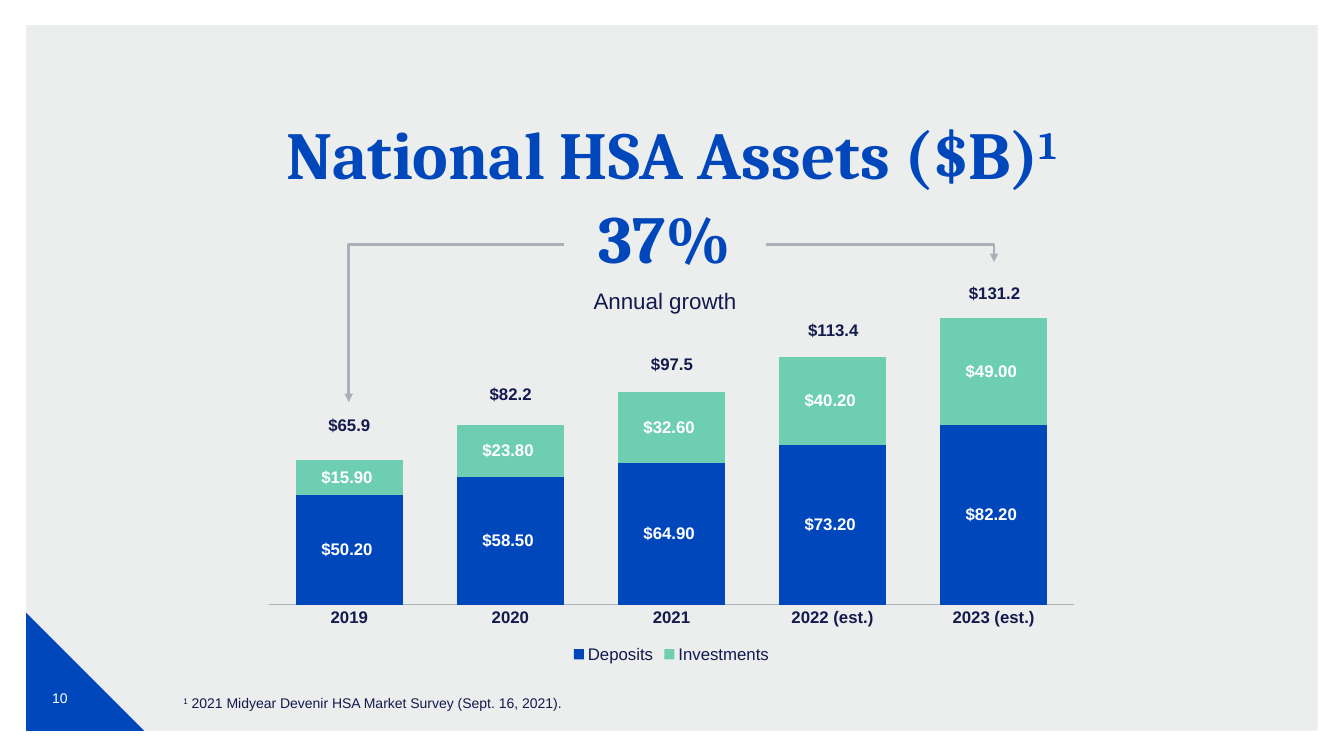
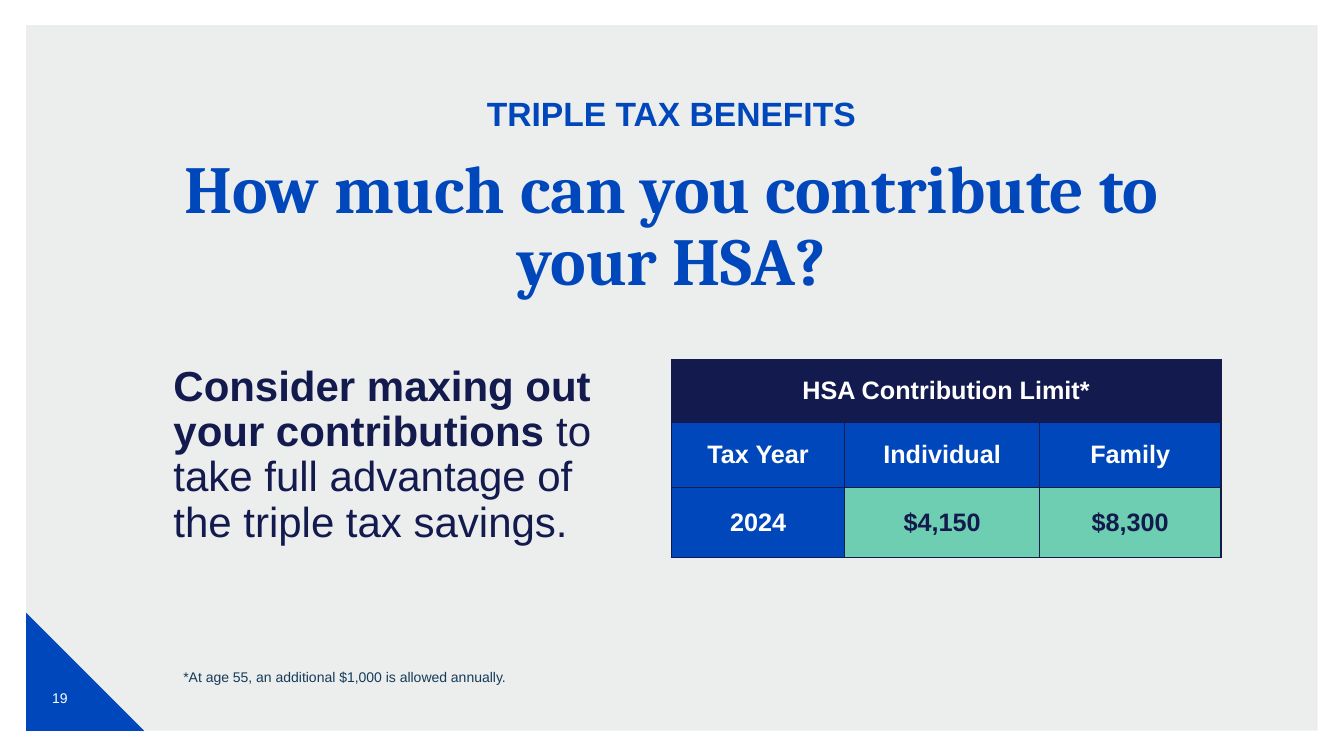
import pptx
import pptx.chart.data
import pptx.dml.color
import pptx.enum.chart
import pptx.enum.shapes
import pptx.enum.text
import pptx.oxml
import pptx.oxml.ns
import pptx.util
from lxml import etree

# Scale: 100 px to the inch
PX = 9144

# Shared style
RGB = pptx.dml.color.RGBColor
BLUE = RGB(0x00, 0x47, 0xBB)
NAVY = RGB(0x13, 0x1A, 0x4D)
MINT = RGB(0x6E, 0xCE, 0xB1)
WHITE = RGB(0xFF, 0xFF, 0xFF)
PANEL = RGB(0xD0, 0xD3, 0xD4)
LINE = RGB(0xAB, 0xAF, 0xB8)
SLATE = RGB(0x15, 0x3B, 0x59)
SANS, SERIF = "Arial", "Cambria"
ALIGN = pptx.enum.text.PP_ALIGN
MIDDLE = pptx.enum.text.MSO_ANCHOR.MIDDLE
TITLE = dict(size=48, face=SERIF, color=BLUE, bold=True, align=ALIGN.CENTER)
HEADING = dict(TITLE, spacing=0.9, inset=0)

# Content: growth slide
GROWTH_TITLE = ["National HSA Assets ($B)", ("1", dict(raised=True))]
GROWTH_NOTE = [("1", dict(raised=True)),
               " 2021 Midyear Devenir HSA Market Survey (Sept. 16, 2021)."]
YEARS = ["2019", "2020", "2021", "2022 (est.)", "2023 (est.)"]
ASSETS = [
    ("Deposits", BLUE, [50.2, 58.5, 64.9, 73.2, 82.2]),
    ("Investments", MINT, [15.9, 23.8, 32.6, 40.2, 49]),
]
# Total label and its top
TOTALS = [("$65.9", 407), ("$82.2", 376), ("$97.5", 346), ("$113.4", 312), ("$131.2", 276)]
DOLLARS = '"$"#,##0.00_);[Red]\\("$"#,##0.00\\)'
# Start and end of the arrows beside the growth figure
GROWTH_ARROWS = [(559, 243, 346, 399), (760, 243, 986, 260)]

# Content: contribution slide
ADVICE = [("Consider maxing out your contributions ", dict(bold=True)),
          "to take full advantage of the triple tax savings."]
LIMITS = [
    ["HSA Contribution Limit*", "", ""],
    ["Tax Year", "Individual", "Family"],
    ["2024", "$4,150", "$8,300"],
]
LIMIT_COLUMNS = [172, 193, 180]
LIMIT_ROWS = [62, 65, 69]


def px(*lengths):
    return [pptx.util.Emu(length * PX) for length in lengths]


def style_font(font, size, color, bold=False, face=SANS):
    font.size, font.bold, font.name = pptx.util.Pt(size), bold, face
    font.color.rgb = color


def write_text(frame, runs, size=12, color=NAVY, bold=False, face=SANS,
               align=ALIGN.LEFT, spacing=None):
    """Fill the first paragraph; a run is a string or (string, overrides)."""
    para = frame.paragraphs[0]
    para.alignment = align
    if spacing:
        para.line_spacing = spacing
    for run in [runs] if isinstance(runs, str) else runs:
        words, changes = (run, {}) if isinstance(run, str) else run
        span = para.add_run()
        span.text = words
        style_font(span.font, size, color, changes.get("bold", bold), face)
        if changes.get("raised"):
            span._r.get_or_add_rPr().set("baseline", "30000")


def add_text(page, place, runs, inset=10, anchor=None, **style):
    frame = page.shapes.add_textbox(*px(*place)).text_frame
    frame.word_wrap = True
    frame.margin_left, frame.margin_right = px(inset, inset)
    if anchor is not None:
        frame.vertical_anchor = anchor
    write_text(frame, runs, **style)


def add_block(page, kind, place, color, opacity=None):
    block = page.shapes.add_shape(kind, *px(*place))
    block.shadow.inherit = False
    block.fill.solid()
    block.fill.fore_color.rgb = color
    block.line.fill.background()
    if opacity:
        tint = block._element.spPr.find(".//" + pptx.oxml.ns.qn("a:srgbClr"))
        etree.SubElement(tint, pptx.oxml.ns.qn("a:alpha"), val=str(opacity * 1000))


def add_page(deck, number):
    """Blank page with the panel, corner and page number."""
    page = deck.slides.add_slide(deck.slide_layouts[6])
    kinds = pptx.enum.shapes.MSO_SHAPE
    add_block(page, kinds.RECTANGLE, (26, 25, 1281, 700), PANEL, opacity=40)
    add_block(page, kinds.RIGHT_TRIANGLE, (26, 608, 117, 117), BLUE)
    add_text(page, (32, 663, 55, 58), number, anchor=MIDDLE,
             size=10, color=WHITE, align=ALIGN.CENTER)
    return page


def add_footnote(page, top, runs, color=NAVY):
    add_text(page, (172, top, 1083, 27), runs, size=10, color=color)


def add_bent_arrow(page, ends):
    arrow = page.shapes.add_connector(pptx.enum.shapes.MSO_CONNECTOR.ELBOW, *px(*ends))
    arrow.line.color.rgb = LINE
    arrow.line.width = pptx.util.Pt(2)
    shape = arrow._element.spPr
    # One corner only
    shape.find(pptx.oxml.ns.qn("a:prstGeom")).set("prst", "bentConnector2")
    stroke = shape.find(pptx.oxml.ns.qn("a:ln"))
    etree.SubElement(stroke, pptx.oxml.ns.qn("a:tailEnd"), type="triangle")
    etree.SubElement(shape, pptx.oxml.ns.qn("a:effectLst"))


def add_assets_chart(page, place):
    kinds = pptx.enum.chart
    data = pptx.chart.data.CategoryChartData(number_format=DOLLARS)
    data.categories = YEARS
    for name, _, values in ASSETS:
        data.add_series(name, values)
    chart = page.shapes.add_chart(kinds.XL_CHART_TYPE.COLUMN_STACKED, *px(*place), data).chart
    chart.has_title = False
    style_font(chart.font, 10, NAVY)

    # Columns and their labels
    plot = chart.plots[0]
    plot.gap_width, plot.overlap = 50, 100
    plot.vary_by_categories = False
    for series, (_, color, _) in zip(plot.series, ASSETS):
        series.format.fill.solid()
        series.format.fill.fore_color.rgb = color
        labels = series.data_labels
        labels.show_value = True
        labels.position = kinds.XL_LABEL_POSITION.CENTER
        labels.number_format, labels.number_format_is_linked = DOLLARS, False
        style_font(labels.font, 12, WHITE, bold=True)

    # Axes and legend
    years = chart.category_axis
    years.major_tick_mark = kinds.XL_TICK_MARK.NONE
    years.format.line.color.rgb = LINE
    years.format.line.width = pptx.util.Pt(0.75)
    style_font(years.tick_labels.font, 12, NAVY, bold=True)
    amounts = chart.value_axis
    amounts.minimum_scale, amounts.maximum_scale = 0, 140
    amounts.has_major_gridlines = False
    amounts.visible = False
    chart.has_legend = True
    chart.legend.position = kinds.XL_LEGEND_POSITION.BOTTOM
    chart.legend.include_in_layout = False
    style_font(chart.legend.font, 12, NAVY)


def border_cell(cell):
    properties = cell._tc.get_or_add_tcPr()
    for index, side in enumerate(("lnL", "lnR", "lnT", "lnB")):
        properties.insert(index, pptx.oxml.parse_xml(
            f'<a:{side} {pptx.oxml.ns.nsdecls("a")} w="12700"><a:solidFill>'
            f'<a:srgbClr val="{NAVY}"/></a:solidFill></a:{side}>'))


def add_limits_table(page, left, top):
    place = px(left, top, sum(LIMIT_COLUMNS), sum(LIMIT_ROWS))
    table = page.shapes.add_table(len(LIMITS), len(LIMIT_COLUMNS), *place).table
    table.first_row = table.horz_banding = False
    for column, width in zip(table.columns, px(*LIMIT_COLUMNS)):
        column.width = width
    for row, height in zip(table.rows, px(*LIMIT_ROWS)):
        row.height = height
    table.cell(0, 0).merge(table.cell(0, len(LIMIT_COLUMNS) - 1))
    for r, words in enumerate(LIMITS):
        for c, word in enumerate(words):
            cell = table.cell(r, c)
            is_amount = r == 2 and c > 0
            cell.fill.solid()
            cell.fill.fore_color.rgb = NAVY if r == 0 else MINT if is_amount else BLUE
            cell.vertical_anchor = MIDDLE
            cell.margin_left, cell.margin_right = px(7, 7)
            cell.margin_top, cell.margin_bottom = px(4, 4)
            border_cell(cell)
            if word:
                write_text(cell.text_frame, word, size=18, bold=True,
                           color=NAVY if is_amount else WHITE, align=ALIGN.CENTER)


def build_growth(deck):
    page = add_page(deck, "10")
    add_text(page, (163, 116, 1006, 95), GROWTH_TITLE, **HEADING)
    add_footnote(page, 684, GROWTH_NOTE)
    add_assets_chart(page, (250, 289, 832, 373))
    add_text(page, (559, 190, 201, 91), "37%", **TITLE)
    add_text(page, (559, 280, 201, 37), "Annual growth", size=16, align=ALIGN.CENTER)
    for index, (total, top) in enumerate(TOTALS):
        add_text(page, (293 + 160 * index, top, 107, 30), total,
                 bold=True, align=ALIGN.CENTER)
    for ends in GROWTH_ARROWS:
        add_bent_arrow(page, ends)


def build_contribution(deck):
    page = add_page(deck, "19")
    add_text(page, (163, 92, 1006, 67), "TRIPLE TAX BENEFITS",
             **dict(HEADING, size=24, face=SANS))
    add_text(page, (163, 149, 1006, 167), "How much can you contribute to your HSA?", **HEADING)
    add_text(page, (172, 357, 432, 258), ADVICE, inset=0, size=30, spacing=0.9)
    add_limits_table(page, 666, 357)
    add_footnote(page, 658, "*At age 55, an additional $1,000 is allowed annually.", color=SLATE)


def main():
    deck = pptx.Presentation()
    deck.slide_width, deck.slide_height = px(1333, 750)
    build_growth(deck)
    build_contribution(deck)
    deck.save("out.pptx")


if __name__ == "__main__":
    main()
